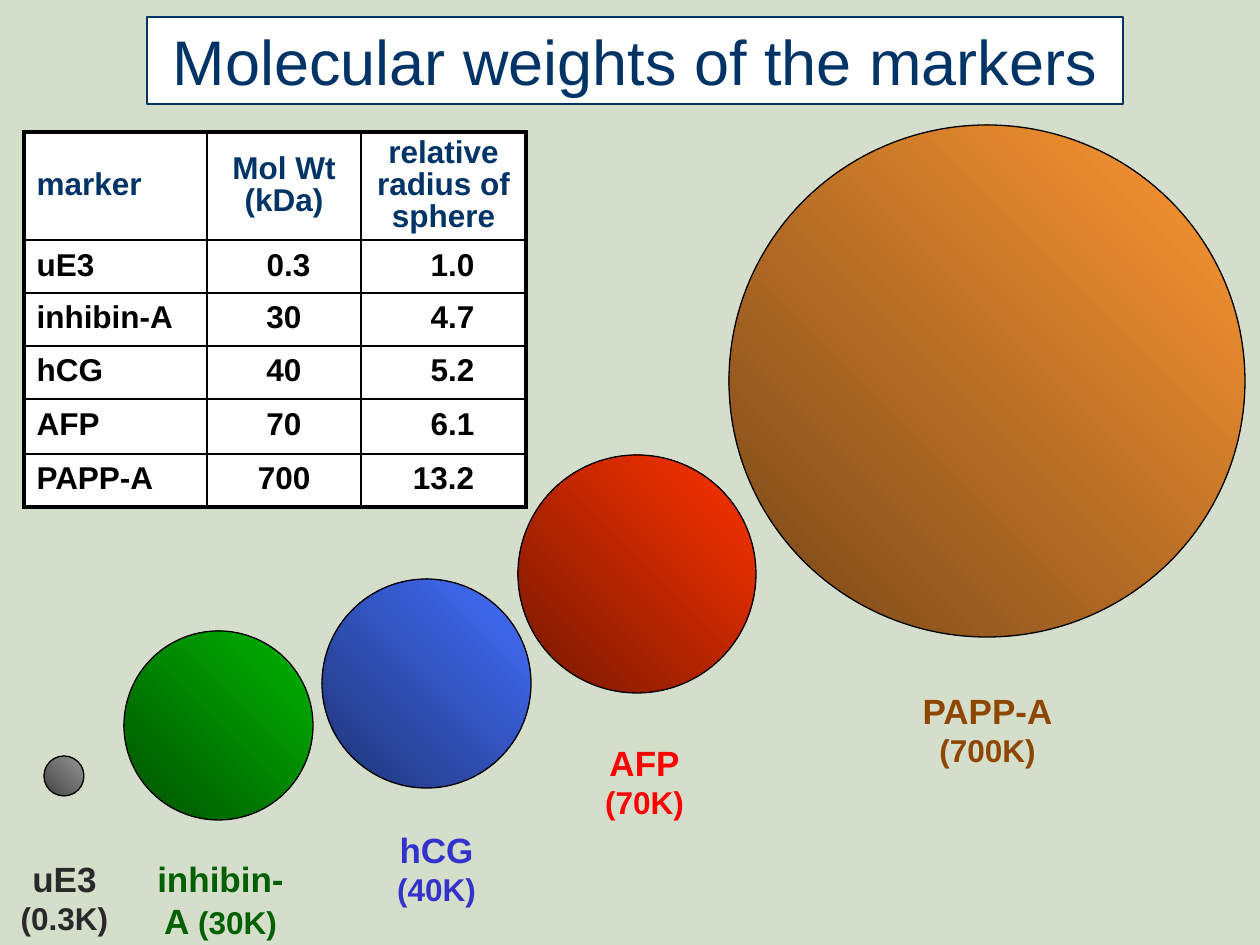
from dataclasses import dataclass

from lxml import etree
from pptx import Presentation
from pptx import util as u
from pptx.dml.color import RGBColor
from pptx.enum import shapes, text
from pptx.oxml.ns import qn

PX = 914400 / 126


@dataclass(frozen=True)
class Theme:
    font: str = "Arial"
    background: str = "D5DDCB"
    paper: str = "FFFFFF"
    ink: str = "000000"
    navy: str = "003366"
    title_size: int = 36
    name_size: int = 20
    body_size: int = 18
    outline: float = 0.75
    inner_rule: float = 1
    outer_rule: float = 2.25


THEME = Theme()

HEADINGS = ("marker", "Mol Wt (kDa)", "relative radius of sphere")
# Each figure is paired with the px indent that lines up its digits.
MARKER_ROWS = (
    ("uE3", ("0.3", 9), ("1.0", 18)),
    ("inhibin-A", ("30", 0), ("4.7", 18)),
    ("hCG", ("40", 0), ("5.2", 18)),
    ("AFP", ("70", 0), ("6.1", 18)),
    ("PAPP-A", ("700", 0), ("13.2", 0)),
)
COLUMN_WIDTHS = (183, 154, 165)
ROW_HEIGHTS = (108, 53, 53, 53, 55, 53)

# name, weight, sphere box, dark and light shade, label box, label colour
SPHERES = (
    ("uE3", "(0.3K)", (44, 756, 40, 40), ("454545", "969696"), (0, 851, 129, 92), "292929"),
    ("inhibin-A", "(30K)", (124, 631, 189, 189), ("005300", "00B400"), (136, 851, 169, 97), "006000"),
    ("hCG", "(40K)", (322, 579, 209, 209), ("1F3476", "4370FF"), (352, 822, 169, 92), "3333CC"),
    ("AFP", "(70K)", (518, 455, 238, 238), ("761800", "FF3300"), (560, 735, 169, 92), "FF0000"),
    ("PAPP-A", "(700K)", (729, 125, 516, 512), ("764718", "FF9933"), (903, 683, 169, 92), "8E4700"),
)


def px(length):
    return u.Emu(round(length * PX))


def rgb(value):
    return RGBColor.from_string(value)


def style_run(run, size, color, bold=True):
    run.font.name = THEME.font
    run.font.size = u.Pt(size)
    run.font.bold = bold
    run.font.color.rgb = rgb(color)


def outline(shape, color):
    shape.line.color.rgb = rgb(color)
    shape.line.width = u.Pt(THEME.outline)


def add_title(slide, box):
    title = slide.shapes.title
    title.left, title.top, title.width, title.height = map(px, box)
    title.fill.solid()
    title.fill.fore_color.rgb = rgb(THEME.paper)
    outline(title, THEME.navy)
    frame = title.text_frame
    frame.text = "Molecular weights of the markers"
    frame.auto_size = text.MSO_AUTO_SIZE.NONE
    frame.vertical_anchor = text.MSO_ANCHOR.MIDDLE
    heading = frame.paragraphs[0]
    heading.alignment = text.PP_ALIGN.CENTER
    style_run(heading.runs[0], THEME.title_size, THEME.navy, bold=False)


def set_borders(cell, outer_sides):
    properties = cell._tc.get_or_add_tcPr()
    for side in "LRTB":
        width = THEME.outer_rule if side in outer_sides else THEME.inner_rule
        rule = etree.SubElement(properties, qn(f"a:ln{side}"), w=str(u.Pt(width)))
        solid = etree.SubElement(rule, qn("a:solidFill"))
        etree.SubElement(solid, qn("a:srgbClr"), val=THEME.ink)


def fill_cell(cell, wording, color, centred, indent, outer_sides):
    set_borders(cell, outer_sides)
    cell.fill.solid()
    cell.fill.fore_color.rgb = rgb(THEME.paper)
    cell.vertical_anchor = text.MSO_ANCHOR.MIDDLE
    cell.margin_left = u.Inches(0.1) + px(indent)
    cell.text_frame.text = wording
    entry = cell.text_frame.paragraphs[0]
    entry.alignment = text.PP_ALIGN.CENTER if centred else text.PP_ALIGN.LEFT
    entry.line_spacing = 0.9
    style_run(entry.runs[0], THEME.body_size, color)


def add_marker_table(slide, left, top):
    rows, columns = len(ROW_HEIGHTS), len(COLUMN_WIDTHS)
    table = slide.shapes.add_table(
        rows, columns, px(left), px(top), px(sum(COLUMN_WIDTHS)), px(sum(ROW_HEIGHTS))
    ).table
    table.first_row = table.horz_banding = False
    for column, width in zip(table.columns, COLUMN_WIDTHS):
        column.width = px(width)
    for row, height in zip(table.rows, ROW_HEIGHTS):
        row.height = px(height)

    for r, entries in enumerate((HEADINGS, *MARKER_ROWS)):
        for c, entry in enumerate(entries):
            wording, indent = (entry, 0) if isinstance(entry, str) else entry
            edges = {"L": c == 0, "R": c == columns - 1, "T": r == 0, "B": r == rows - 1}
            outer_sides = [side for side, is_outer in edges.items() if is_outer]
            color = THEME.navy if r == 0 else THEME.ink
            fill_cell(table.cell(r, c), wording, color, c > 0, indent, outer_sides)


def add_sphere(slide, box, shades):
    sphere = slide.shapes.add_shape(shapes.MSO_SHAPE.OVAL, *map(px, box))
    sphere.shadow.inherit = False
    sphere.fill.gradient()
    sphere.fill.gradient_angle = 45
    for stop, shade in zip(sphere.fill.gradient_stops, shades):
        stop.color.rgb = rgb(shade)
    outline(sphere, THEME.ink)


def add_label(slide, box, name, weight, color):
    frame = slide.shapes.add_textbox(*map(px, box)).text_frame
    frame.word_wrap = True
    label = frame.paragraphs[0]
    label.alignment = text.PP_ALIGN.CENTER
    for wording, size in ((name, THEME.name_size), (f" {weight}", THEME.body_size)):
        run = label.add_run()
        run.text = wording
        style_run(run, size, color)


def main():
    deck = Presentation()
    deck.slide_width, deck.slide_height = px(1260), px(945)
    slide = deck.slides.add_slide(deck.slide_layouts[5])
    slide.background.fill.solid()
    slide.background.fill.fore_color.rgb = rgb(THEME.background)

    add_title(slide, (147, 17, 976, 87))
    add_marker_table(slide, 24, 132)
    for name, weight, sphere_box, shades, label_box, color in SPHERES:
        add_sphere(slide, sphere_box, shades)
        add_label(slide, label_box, name, weight, color)
    deck.save("out.pptx")


if __name__ == "__main__":
    main()
